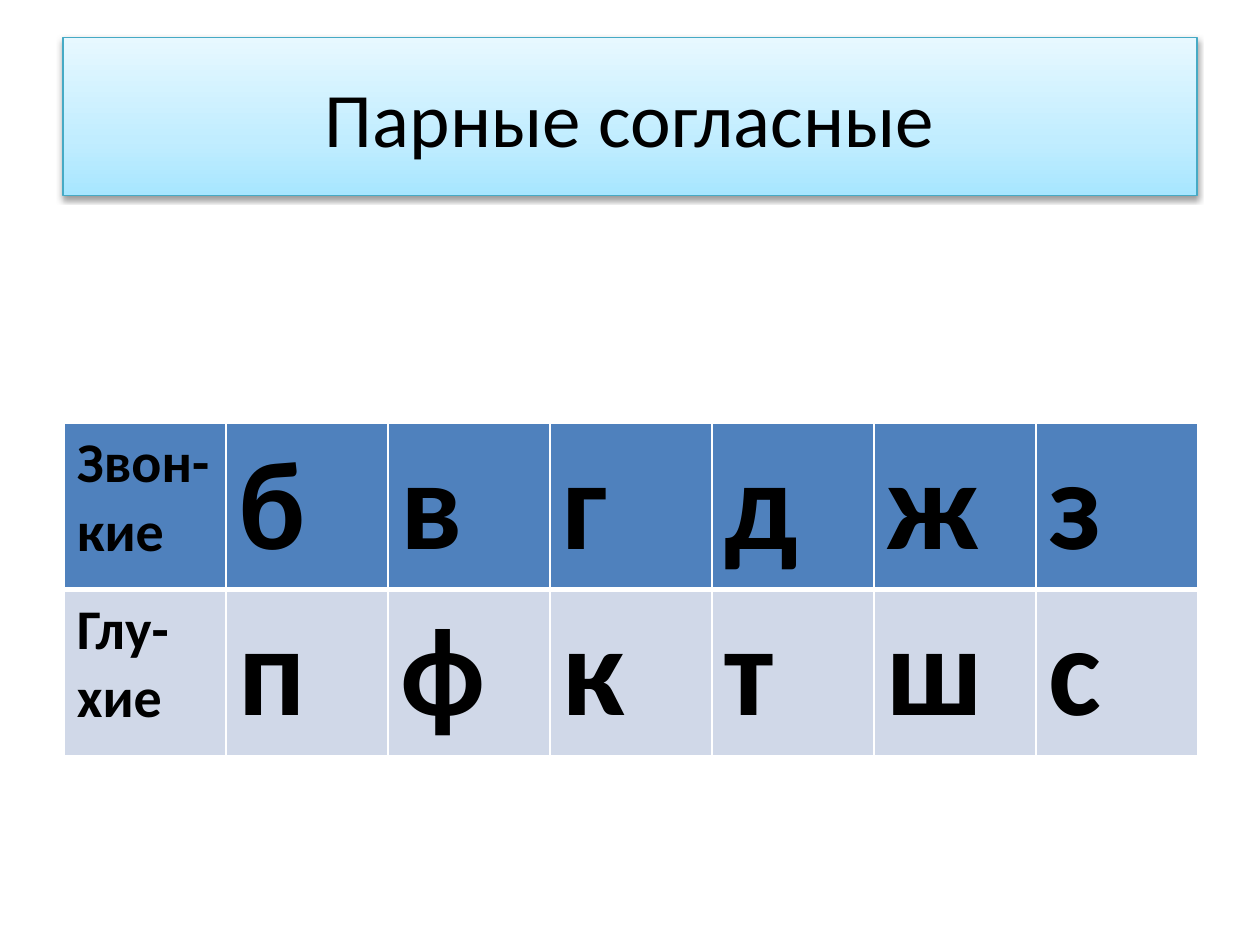
from dataclasses import dataclass

from lxml import etree
from pptx import Presentation
from pptx import util as u
from pptx.dml.color import RGBColor
from pptx.enum import text
from pptx.oxml import ns

BLACK = RGBColor(0x00, 0x00, 0x00)
WHITE = RGBColor(0xFF, 0xFF, 0xFF)
HEADER_BLUE = RGBColor(0x4F, 0x81, 0xBD)
PALE_BLUE = RGBColor(0xD0, 0xD8, 0xE8)
TITLE_EDGE = RGBColor(0x46, 0xAA, 0xC5)
TITLE_GRADIENT = (
    (0, RGBColor(0xA7, 0xE6, 0xFF)),
    (35, RGBColor(0xC1, 0xED, 0xFF)),
    (100, RGBColor(0xE7, 0xF8, 0xFF)),
)
FONT = "Calibri"


@dataclass
class ConsonantRow:
    label: str
    letters: str
    fill: RGBColor
    top_border: float
    bottom_border: float


ROWS = (
    ConsonantRow("Звон-кие", "бвгджз", HEADER_BLUE, 1, 3),
    ConsonantRow("Глу-хие", "пфктшс", PALE_BLUE, 3, 1),
)


def add_child(parent, tag: str, **attributes):
    values = {name: str(value) for name, value in attributes.items()}
    return etree.SubElement(parent, ns.qn(tag), values)


def add_run(paragraph, words: str, size: float, bold: bool = False) -> None:
    run = paragraph.add_run()
    run.text = words
    run.font.name = FONT
    run.font.size = u.Pt(size)
    run.font.bold = bold
    run.font.color.rgb = BLACK


def format_title(title) -> None:
    title.left, title.top = u.Inches(0.5), u.Inches(0.3)
    title.width, title.height = u.Inches(9), u.Inches(1.25)
    properties = title._element.spPr

    # Gradient running upwards
    gradient = add_child(properties, "a:gradFill", rotWithShape=1)
    stops = add_child(gradient, "a:gsLst")
    for percent, color in TITLE_GRADIENT:
        stop = add_child(stops, "a:gs", pos=percent * 1000)
        add_child(stop, "a:srgbClr", val=color)
    add_child(gradient, "a:lin", ang=270 * 60000, scaled=1)

    title.line.color.rgb = TITLE_EDGE
    title.line.width = u.Pt(0.75)

    # Soft shadow below
    effects = add_child(properties, "a:effectLst")
    shadow = add_child(effects, "a:outerShdw", blurRad=u.Pt(3.1), dist=u.Pt(1.6),
                       dir=90 * 60000, rotWithShape=0)
    shadow_color = add_child(shadow, "a:srgbClr", val=BLACK)
    add_child(shadow_color, "a:alpha", val=38000)

    title.text_frame.vertical_anchor = text.MSO_ANCHOR.MIDDLE
    paragraph = title.text_frame.paragraphs[0]
    paragraph.alignment = text.PP_ALIGN.CENTER
    add_run(paragraph, "Парные согласные", 44)


def format_cell(cell, words: str, size: float, row: ConsonantRow) -> None:
    add_run(cell.text_frame.paragraphs[0], words, size, bold=True)
    # Borders come before the fill in the cell properties
    properties = cell._tc.get_or_add_tcPr()
    widths = {"L": 1, "R": 1, "T": row.top_border, "B": row.bottom_border}
    for side, width in widths.items():
        border = add_child(properties, f"a:ln{side}", w=u.Pt(width))
        add_child(add_child(border, "a:solidFill"), "a:srgbClr", val=WHITE)
    cell.fill.solid()
    cell.fill.fore_color.rgb = row.fill


def add_consonant_table(slide) -> None:
    column_count = 1 + len(ROWS[0].letters)
    frame = slide.shapes.add_table(len(ROWS), column_count, u.Inches(0.51),
                                   u.Inches(3.36), u.Inches(9), u.Inches(2.6))
    for row_index, row in enumerate(ROWS):
        for column_index, words in enumerate((row.label, *row.letters)):
            size = 32 if column_index == 0 else 72
            format_cell(frame.table.cell(row_index, column_index), words, size, row)


def main() -> None:
    presentation = Presentation()
    presentation.slide_width = u.Inches(10)
    presentation.slide_height = u.Inches(7.5)
    slide = presentation.slides.add_slide(presentation.slide_layouts[5])
    format_title(slide.shapes.title)
    add_consonant_table(slide)
    presentation.save("out.pptx")


if __name__ == "__main__":
    main()
